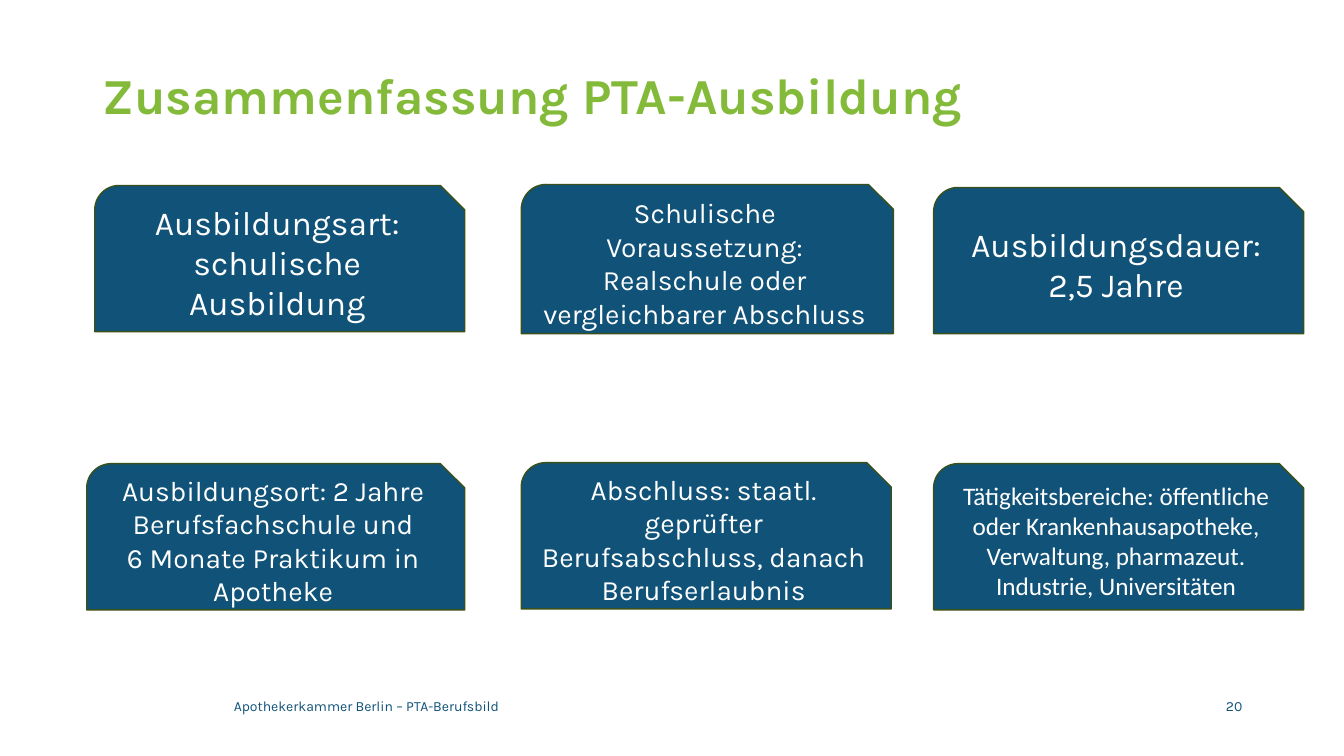
import pptx
import pptx.util
import pptx.dml.color
import pptx.enum.shapes
import pptx.enum.text
from dataclasses import dataclass

Inches = pptx.util.Inches
Align = pptx.enum.text.PP_ALIGN


@dataclass(frozen=True)
class Theme:
    blue: str = "105278"
    green: str = "83BA3A"
    olive: str = "395119"
    white: str = "FFFFFF"
    main_font: str = "Karla"
    plain_font: str = "Calibri"
    title: int = 36
    large: int = 24
    medium: int = 20
    small: int = 18
    footer: int = 10


theme = Theme()

SLIDE = (13.33, 7.5)
COLUMNS = (0.94, 5.17, 9.26)
ROWS = (1.84, 4.6)
CARD = (3.67, 1.45)
FOOTER_TOP, FOOTER_HEIGHT = 6.8, 0.4

LABELS = [
    {"lines": ["Zusammenfassung PTA-Ausbildung"], "box": (0.92, 0.4, 11.5, 1.14),
     "size": theme.title, "color": theme.green, "bold": True, "spacing": 0.9},
    {"lines": ["Apothekerkammer Berlin – PTA-Berufsbild"],
     "box": (2.22, FOOTER_TOP, 8.71, FOOTER_HEIGHT),
     "size": theme.footer, "color": theme.blue},
    {"lines": ["20"], "box": (10.98, FOOTER_TOP, 1.44, FOOTER_HEIGHT),
     "size": theme.footer, "color": theme.blue, "align": Align.RIGHT},
]

CARDS = [
    [
        {"lines": ["Ausbildungsart: schulische Ausbildung"], "size": theme.large},
        {"lines": ["Schulische Voraussetzung:\vRealschule oder vergleichbarer Abschluss"],
         "size": theme.medium, "nudge": (0, -0.01, 0.02, 0.03)},
        {"lines": ["Ausbildungsdauer:\v2,5 Jahre"], "size": theme.large,
         "nudge": (0, 0.02, 0, 0)},
    ],
    [
        {"lines": ["Ausbildungsort: 2 Jahre Berufsfachschule und",
                   "6 Monate Praktikum in Apotheke"],
         "size": theme.medium, "nudge": (-0.08, 0, 0.08, 0)},
        {"lines": ["Abschluss: staatl. geprüfter Berufsabschluss, danach Berufserlaubnis"],
         "size": theme.medium, "nudge": (0, -0.01, 0, 0)},
        {"lines": ["Tätigkeitsbereiche: öffentliche oder Krankenhausapotheke, "
                   "Verwaltung, pharmazeut. Industrie, Universitäten"],
         "size": theme.small, "font": theme.plain_font},
    ],
]


def rgb(value):
    return pptx.dml.color.RGBColor.from_string(value)


def write(shape, lines, size, color, font=theme.main_font, bold=False,
          align=Align.LEFT, spacing=1.0):
    frame = shape.text_frame
    frame.word_wrap = True
    frame.vertical_anchor = pptx.enum.text.MSO_ANCHOR.MIDDLE
    formats = {"name": font, "size": pptx.util.Pt(size), "bold": bold}
    for index, line in enumerate(lines):
        para = frame.add_paragraph() if index else frame.paragraphs[0]
        para.text = line
        para.alignment = align
        para.line_spacing = spacing
        for span in para.runs:
            for key, value in formats.items():
                setattr(span.font, key, value)
            span.font.color.rgb = rgb(color)


def add_label(page, box, **text):
    write(page.shapes.add_textbox(*map(Inches, box)), **text)


def add_card(page, row, column, nudge=(0, 0, 0, 0), **text):
    grid_box = (COLUMNS[column], ROWS[row], *CARD)
    box = [Inches(base + shift) for base, shift in zip(grid_box, nudge)]
    card = page.shapes.add_shape(
        pptx.enum.shapes.MSO_SHAPE.SNIP_ROUND_RECTANGLE, *box)
    card.shadow.inherit = False
    card.fill.solid()
    card.fill.fore_color.rgb = rgb(theme.blue)
    card.line.color.rgb = rgb(theme.olive)
    card.line.width = pptx.util.Pt(1)
    write(card, color=theme.white, align=Align.CENTER, **text)


def main():
    deck = pptx.Presentation()
    deck.slide_width, deck.slide_height = map(Inches, SLIDE)
    page = deck.slides.add_slide(deck.slide_layouts[6])
    for label in LABELS:
        add_label(page, **label)
    for row, cards in enumerate(CARDS):
        for column, card in enumerate(cards):
            add_card(page, row, column, **card)
    deck.save("out.pptx")


if __name__ == "__main__":
    main()
